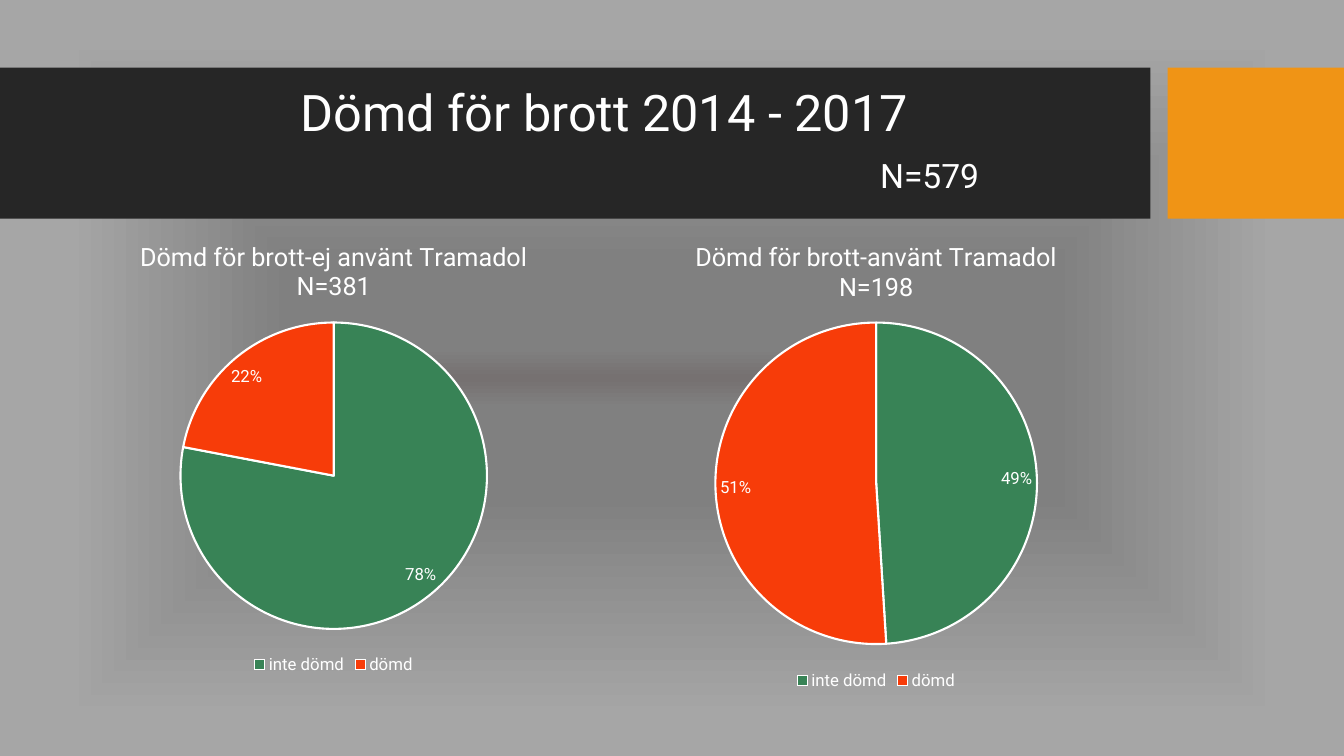
import pptx
import pptx.chart.data
import pptx.dml.color
import pptx.enum.chart
import pptx.enum.shapes
import pptx.enum.text
import pptx.oxml
import pptx.oxml.ns
import pptx.util

Inches = pptx.util.Inches
Pt = pptx.util.Pt
RGB = pptx.dml.color.RGBColor
WHITE = RGB(0xFF, 0xFF, 0xFF)
DARK = RGB(0x26, 0x26, 0x26)
ORANGE = RGB(0xF0, 0x94, 0x15)
GREEN = RGB(0x38, 0x83, 0x56)
RED = RGB(0xF7, 0x3C, 0x09)
STOPS = [(0, RGB(0x76, 0x71, 0x71)), (8, RGB(0x80, 0x80, 0x80)),
         (31, RGB(0x80, 0x80, 0x80)), (90, RGB(0xA6, 0xA6, 0xA6))]


def style(font, size):
    form = {"name": "Roboto", "size": Pt(size), "bold": False}
    for key, value in form.items():
        setattr(font, key, value)
    font.color.rgb = WHITE


def backdrop(slide):
    slide.background.fill.solid()
    holder = slide.element.find(".//" + pptx.oxml.ns.qn("p:bgPr"))
    stops = "".join(
        f'<a:gs pos="{pos * 1000}"><a:srgbClr val="{color}"/></a:gs>'
        for pos, color in STOPS)
    grad = pptx.oxml.parse_xml(
        f'<a:gradFill {pptx.oxml.ns.nsdecls("a")} rotWithShape="1">'
        f'<a:gsLst>{stops}</a:gsLst><a:path path="shape">'
        '<a:fillToRect l="50000" t="50000" r="50000" b="50000"/>'
        '</a:path></a:gradFill>')
    holder.replace(holder[0], grad)


def header(slide, left, top, width, height):
    title = slide.shapes.title
    # Dark band and orange block, behind the title
    block = 1.75
    band = width - block - 0.17
    for x, wide, color in ((left, band, DARK),
                           (left + width - block, block, ORANGE)):
        bar = slide.shapes.add_shape(
            pptx.enum.shapes.MSO_SHAPE.RECTANGLE,
            Inches(x), Inches(top), Inches(wide), Inches(height))
        bar.shadow.inherit = False
        bar.fill.solid()
        bar.fill.fore_color.rgb = color
        bar.line.fill.background()
        title._element.addprevious(bar._element)

    # Title with the sample size set off to the right
    place = {"left": left + 0.74, "top": top + 0.15,
             "width": 10.51, "height": 1.18}
    for key, value in place.items():
        setattr(title, key, Inches(value))
    frame = title.text_frame
    form = {"word_wrap": True,
            "auto_size": pptx.enum.text.MSO_AUTO_SIZE.NONE,
            "vertical_anchor": pptx.enum.text.MSO_ANCHOR.MIDDLE}
    for key, value in form.items():
        setattr(frame, key, value)
    frame.text = "Dömd för brott 2014 - 2017\nN=579"
    for para, size, gap in zip(frame.paragraphs, (36, 24), (0, 12)):
        form = {"alignment": pptx.enum.text.PP_ALIGN.CENTER,
                "line_spacing": 0.9, "space_before": Pt(gap)}
        for key, value in form.items():
            setattr(para, key, value)
        style(para.runs[0].font, size)
    indent = frame.paragraphs[1]._p.get_or_add_pPr()
    indent.set("marL", str(Inches(6.45)))
    indent.set("indent", "0")


def pie(slide, left, top, width, height, name, values, size):
    data = pptx.chart.data.CategoryChartData(number_format="0%")
    data.categories = ["inte dömd", "dömd"]
    data.add_series("Series 1", values)
    chart = slide.shapes.add_chart(
        pptx.enum.chart.XL_CHART_TYPE.PIE, Inches(left), Inches(top),
        Inches(width), Inches(height), data).chart
    style(chart.font, 10)

    # Title
    chart.has_title = True
    frame = chart.chart_title.text_frame
    frame.text = name
    for para in frame.paragraphs:
        style(para.runs[0].font, 18)
    chart.chart_title.include_in_layout = False

    # Legend
    chart.has_legend = True
    chart.legend.position = pptx.enum.chart.XL_LEGEND_POSITION.BOTTOM
    chart.legend.include_in_layout = False
    style(chart.legend.font, 12)

    # Slices
    plot = chart.plots[0]
    plot.vary_by_categories = True
    for index, color in enumerate((GREEN, RED)):
        form = plot.series[0].points[index].format
        form.fill.solid()
        form.fill.fore_color.rgb = color
        form.line.color.rgb = WHITE
        form.line.width = Pt(1.5)

    # Labels
    plot.has_data_labels = True
    labels = plot.data_labels
    form = {"show_value": True, "show_percentage": False,
            "number_format": "0%", "number_format_is_linked": False,
            "position": pptx.enum.chart.XL_LABEL_POSITION.BEST_FIT}
    for key, value in form.items():
        setattr(labels, key, value)
    style(labels.font, 12)

    # Centred square for the pie
    box = {"x": (width - size) / 2 / width, "y": 0.98 / height,
           "w": size / width, "h": size / height}
    parts = "".join(f'<c:{key}Mode val="edge"/>' for key in "xy")
    parts += "".join(f'<c:{key} val="{value:.4f}"/>'
                     for key, value in box.items())
    layout = pptx.oxml.parse_xml(
        f'<c:layout {pptx.oxml.ns.nsdecls("c")}><c:manualLayout>'
        f'<c:layoutTarget val="inner"/>{parts}'
        '</c:manualLayout></c:layout>')
    area = chart._chartSpace.find(".//" + pptx.oxml.ns.qn("c:plotArea"))
    for old in area.findall(pptx.oxml.ns.qn("c:layout")):
        area.remove(old)
    area.insert(0, layout)


def main():
    deck = pptx.Presentation()
    deck.slide_width = Inches(13.33)
    deck.slide_height = Inches(7.5)
    slide = deck.slides.add_slide(deck.slide_layouts[5])
    backdrop(slide)
    header(slide, 0, 0.67, 13.33, 1.5)
    pie(slide, 6.12, 2.22, 5.14, 4.67,
        "Dömd för brott-använt Tramadol\nN=198", (0.49, 0.51), 3.19)
    pie(slide, 0.74, 2.22, 5.14, 4.51,
        "Dömd för brott-ej använt Tramadol\nN=381", (0.78, 0.22), 3.04)
    deck.save("out.pptx")


if __name__ == "__main__":
    main()
